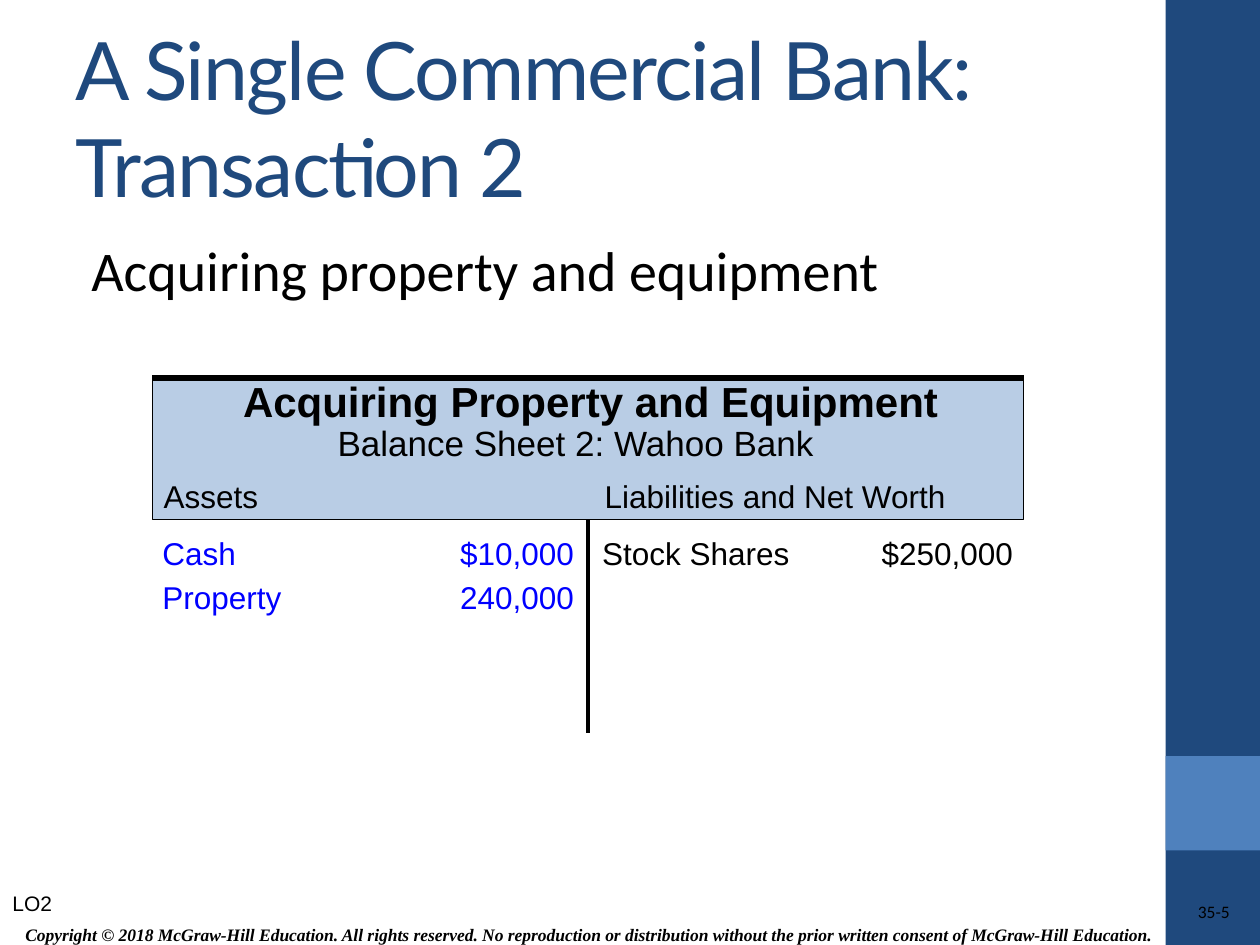
from lxml.etree import SubElement
from pptx import Presentation
from pptx.dml.color import RGBColor
from pptx.enum.shapes import MSO_CONNECTOR, MSO_SHAPE
from pptx.enum.text import MSO_ANCHOR, MSO_AUTO_SIZE, PP_ALIGN
from pptx.oxml.ns import qn
from pptx.util import Pt

COLORS = {"navy": "1F497D", "blue": "4F81BD", "pale": "B9CDE5",
          "black": "000000", "entry": "0000FF"}


def rgb(name):
    return RGBColor.from_string(COLORS[name])


def write(tf, text, font="Arial", size=18, color="black", bold=False,
          italic=False, align=PP_ALIGN.LEFT, anchor=MSO_ANCHOR.TOP,
          wrap=True, auto_size=MSO_AUTO_SIZE.NONE):
    tf.word_wrap, tf.auto_size, tf.vertical_anchor = wrap, auto_size, anchor
    p = tf.paragraphs[0]
    p.alignment = align
    r = p.add_run()
    r.text = text
    r.font.name, r.font.size = font, Pt(size)
    r.font.bold, r.font.italic = bold, italic
    r.font.color.rgb = rgb(color)
    return p


def place(sp, x, y, w, h):
    sp.left, sp.top, sp.width, sp.height = Pt(x), Pt(y), Pt(w), Pt(h)


def add_text(s, x, y, w, h, text, **fmt):
    sp = s.shapes.add_textbox(Pt(x), Pt(y), Pt(w), Pt(h))
    write(sp.text_frame, text, **fmt)
    return sp


def add_label(s, x, y, w, h, text, **fmt):
    return add_text(s, x, y, w, h, text, wrap=False,
                    auto_size=MSO_AUTO_SIZE.SHAPE_TO_FIT_TEXT, **fmt)


def add_rect(s, x, y, w, h, fill, line=None):
    sp = s.shapes.add_shape(MSO_SHAPE.RECTANGLE, Pt(x), Pt(y), Pt(w), Pt(h))
    sp.shadow.inherit = False
    sp.fill.solid()
    sp.fill.fore_color.rgb = rgb(fill)
    if line:
        sp.line.color.rgb, sp.line.width = rgb(line), Pt(0.75)
    else:
        sp.line.fill.background()
    return sp


def add_line(s, x1, y1, x2, y2, width):
    c = s.shapes.add_connector(MSO_CONNECTOR.STRAIGHT, Pt(x1), Pt(y1), Pt(x2), Pt(y2))
    c.line.color.rgb, c.line.width = rgb("black"), Pt(width)
    SubElement(c._element.spPr, qn("a:effectLst"))
    return c


def side_band(s, x, y, w, h):
    add_rect(s, x, y, w, h, "navy")
    add_rect(s, x, y + 0.8 * h, w, w, "blue")


def footer(s, x, y, w, h):
    add_text(s, x, y, 65.5, 21.8, "LO2", size=12,
             auto_size=MSO_AUTO_SIZE.SHAPE_TO_FIT_TEXT)
    add_text(s, x + 4.3, y + h - 16, w - 56.2, 20,
             "Copyright © 2018 McGraw-Hill Education. All rights reserved. No reproduction "
             "or distribution without the prior written consent of McGraw-Hill Education.",
             font="Times New Roman", size=10, bold=True, italic=True,
             align=PP_ALIGN.CENTER, anchor=MSO_ANCHOR.MIDDLE)
    sp = add_text(s, x + w - 157.7, y + 9.4, 140.4, 14.4, "35-5",
                  font="Calibri", size=10, align=PP_ALIGN.RIGHT)
    tf = sp.text_frame
    tf.margin_left = tf.margin_right = tf.margin_top = tf.margin_bottom = 0
    tf.paragraphs[0].line_spacing = 1.02


def heading(s, x, y, w, h):
    title, body = s.shapes.title, s.placeholders[1]
    place(title, x, y, w, 90)
    p = write(title.text_frame, "A Single Commercial Bank: Transaction 2", font="Lato",
              size=46, color="navy", anchor=MSO_ANCHOR.MIDDLE)
    p.runs[0].font._element.set("spc", "-100")
    place(body, x, y + 105.8, w, h - 105.8)
    p = write(body.text_frame, "Acquiring property and equipment", font="Calibri", size=32)
    p.line_spacing, p.space_before = 1.1, Pt(0)
    pPr = p._p.get_or_add_pPr()
    pPr.set("marL", str(Pt(27)))
    pPr.set("indent", str(Pt(-18)))
    SubElement(pPr, qn("a:buNone"))


def balance_sheet(s, x, y, w, h):
    head_h, row_h, amount_w, mid = 81, 25.2, 90, x + w / 2
    stem = add_line(s, mid, y + head_h, mid, y + h, 2.25)
    head = add_rect(s, x, y, w, head_h, "pale", "black")
    stem.begin_connect(head, 2)
    add_line(s, x, y, x + w, y, 3)
    add_label(s, x - 0.7, y + 53.3, 68.4, 28.8, "Assets")
    add_label(s, mid + 2.4, y + 53.3, 209.5, 28.8, "Liabilities and Net Worth")
    add_label(s, x + 44.7, y - 5, 415.4, 36.7, "Acquiring Property and Equipment",
              size=24, bold=True)
    add_label(s, x + 98.7, y + 21.6, 289.4, 31.7, "Balance Sheet 2: Wahoo Bank", size=20)

    sides = [
        (x - 1.4, mid - 1, "entry", [("Cash", 56.2, "$10,000"),
                                     ("Property", 82.8, "240,000")]),
        (mid + 1, x + w + 1, "black", [("Stock Shares", 121.7, "$250,000")]),
    ]
    for left, right, color, rows in sides:
        for i, (name, name_w, amount) in enumerate(rows):
            top = y + 85.7 + i * row_h
            add_label(s, left, top, name_w, 28.8, name, color=color)
            add_text(s, right - amount_w, top, amount_w, 28.8, amount, color=color,
                     align=PP_ALIGN.RIGHT, wrap=True,
                     auto_size=MSO_AUTO_SIZE.SHAPE_TO_FIT_TEXT)


def main():
    prs = Presentation()
    prs.slide_width, prs.slide_height = Pt(720), Pt(540)
    s = prs.slides.add_slide(prs.slide_layouts[1])
    side_band(s, 666, 0, 54, 540)
    footer(s, 0, 505.5, 720, 34.5)
    heading(s, 36, 21.6, 600, 483.9)
    balance_sheet(s, 87.1, 216, 497.8, 203)
    prs.save("out.pptx")


if __name__ == "__main__":
    main()
